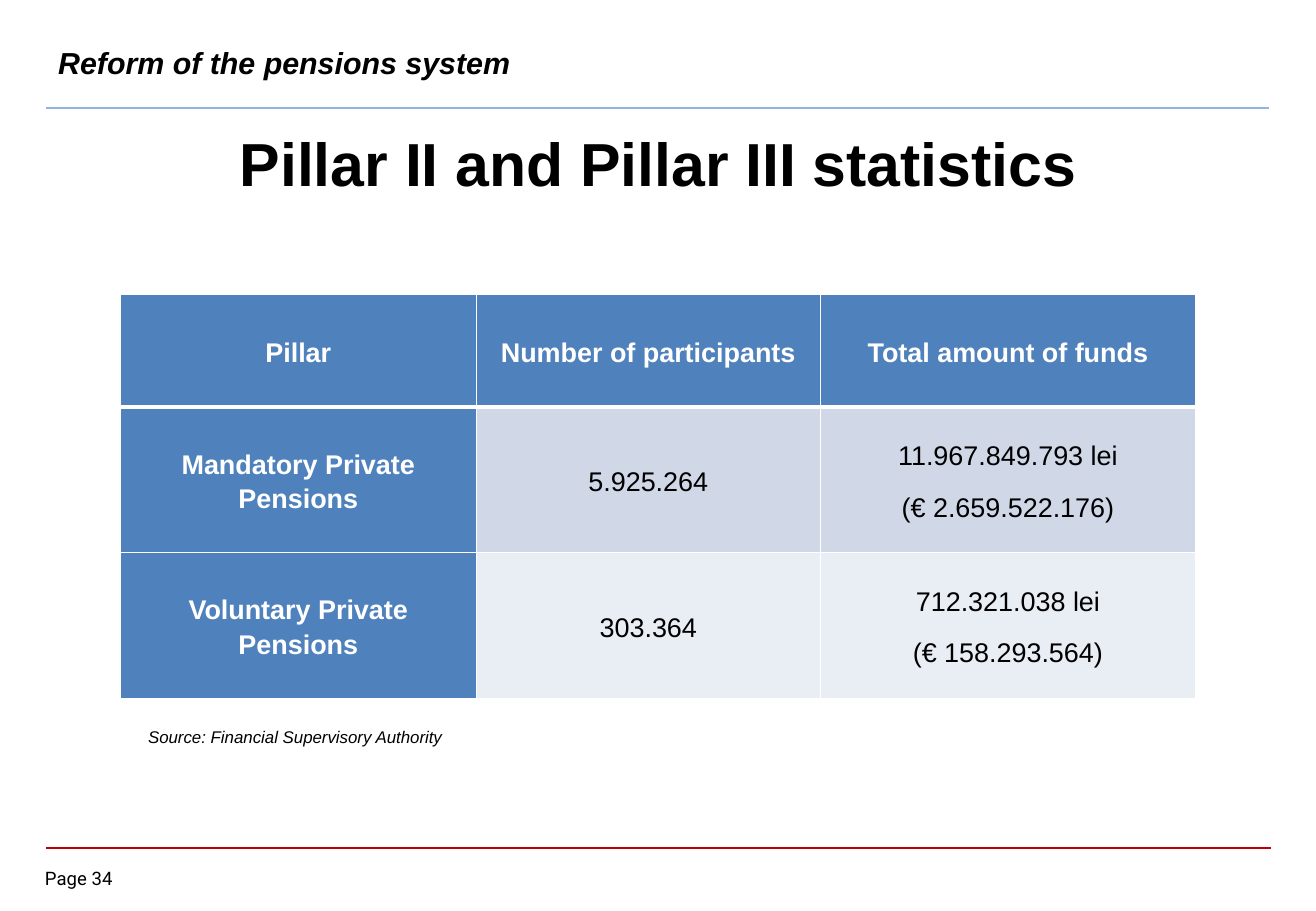
"""Build the slide with statistics on private pension pillars."""
import dataclasses

import lxml.etree
import pptx
import pptx.dml.color
import pptx.enum.shapes
import pptx.enum.text
import pptx.oxml.ns
import pptx.util

ALIGN = pptx.enum.text.PP_ALIGN
ANCHOR = pptx.enum.text.MSO_ANCHOR


@dataclasses.dataclass(frozen=True)
class Theme:
    """Colours, fonts and type sizes of the slide."""
    ink: str = "000000"
    paper: str = "FFFFFF"
    header_rule: str = "8EB4E3"
    footer_rule: str = "C00000"
    heading_fill: str = "4F81BD"
    band_fills: tuple = ("D0D8E8", "E9EDF4")
    font: str = "Arial"
    page_font: str = "Roboto"
    title_size: int = 36
    section_size: int = 18
    table_size: int = 16
    page_size: int = 11
    source_size: int = 10


class SlideBuilder:
    """Draw styled elements on the current slide."""

    EMU_PER_PX = 9144

    def __init__(self, deck, theme):
        """Set the slide size and add a title-only page."""
        self.theme = theme
        deck.slide_width, deck.slide_height = self.px(1083), self.px(750)
        self.page = deck.slides.add_slide(deck.slide_layouts[5])

    def px(self, length):
        """Turn px into EMU."""
        return pptx.util.Emu(length * self.EMU_PER_PX)

    def color(self, code):
        """Turn a hex code into a colour."""
        return pptx.dml.color.RGBColor.from_string(code)

    def style(self, frame, size, color=None, font=None, bold=False, italic=False,
              align=ALIGN.LEFT, spacing=None, after=None):
        """Format every paragraph and run of a text frame."""
        for para in frame.paragraphs:
            para.alignment = align
            if spacing:
                para.line_spacing = spacing
                para.space_after = pptx.util.Pt(after)
            for span in para.runs:
                span.font.name = font or self.theme.font
                span.font.size = pptx.util.Pt(size)
                span.font.bold, span.font.italic = bold, italic
                span.font.color.rgb = self.color(color or self.theme.ink)

    def title(self, text, left, top, width, height, bottom_inset):
        """Fill and place the title placeholder."""
        box = self.page.shapes.title
        box.left, box.top = self.px(left), self.px(top)
        box.width, box.height = self.px(width), self.px(height)
        frame = box.text_frame
        frame.text = text
        frame.auto_size = pptx.enum.text.MSO_AUTO_SIZE.NONE
        frame.vertical_anchor = ANCHOR.MIDDLE
        frame.margin_bottom = self.px(bottom_inset)
        self.style(frame, self.theme.title_size, bold=True, align=ALIGN.CENTER)

    def text(self, text, left, top, width, height, size, anchor=ANCHOR.TOP,
             inset=True, **look):
        """Add a text box."""
        box = self.page.shapes.add_textbox(*map(self.px, (left, top, width, height)))
        frame = box.text_frame
        frame.word_wrap = True
        frame.vertical_anchor = anchor
        if not inset:
            frame.margin_left = frame.margin_right = 0
            frame.margin_top = frame.margin_bottom = 0
        frame.text = text
        self.style(frame, size, **look)

    def rule(self, left, right, top, color, weight):
        """Add a horizontal line."""
        line = self.page.shapes.add_connector(
            pptx.enum.shapes.MSO_CONNECTOR.STRAIGHT,
            *map(self.px, (left, top, right, top)))
        line.line.color.rgb = self.color(color)
        line.line.width = pptx.util.Pt(weight)
        lxml.etree.SubElement(line._element.spPr, pptx.oxml.ns.qn("a:effectLst"))

    def borders(self, cell, weights):
        """Draw the left, right, top and bottom borders of a cell."""
        properties = cell._tc.get_or_add_tcPr()
        for side, weight in zip("LRTB", weights):
            edge = lxml.etree.SubElement(properties, pptx.oxml.ns.qn("a:ln" + side),
                                         w=str(pptx.util.Pt(weight)))
            fill = lxml.etree.SubElement(edge, pptx.oxml.ns.qn("a:solidFill"))
            lxml.etree.SubElement(fill, pptx.oxml.ns.qn("a:srgbClr"),
                                  val=self.theme.paper)

    def table(self, rows, left, top, widths, heights):
        """Add a table with a heading row, a heading column and banded rows."""
        grid = self.page.shapes.add_table(
            len(rows), len(widths),
            *map(self.px, (left, top, sum(widths), sum(heights)))).table
        for column, width in zip(grid.columns, widths):
            column.width = self.px(width)
        for row, height in zip(grid.rows, heights):
            row.height = self.px(height)
        for i, row in enumerate(rows):
            for j, text in enumerate(row):
                self.cell(grid.cell(i, j), text, i, j)

    def cell(self, cell, text, i, j):
        """Fill and format one table cell."""
        theme = self.theme
        heading = i == 0 or j == 0
        self.borders(cell, (1, 1, 3 if i == 1 else 1, 3 if i == 0 else 1))
        cell.fill.solid()
        cell.fill.fore_color.rgb = self.color(
            theme.heading_fill if heading else theme.band_fills[(i - 1) % 2])
        cell.margin_left = cell.margin_right = self.px(8)
        cell.margin_top = cell.margin_bottom = 0
        cell.vertical_anchor = ANCHOR.MIDDLE
        cell.text_frame.text = text
        self.style(cell.text_frame, theme.table_size,
                   color=theme.paper if heading else theme.ink, bold=heading,
                   align=ALIGN.CENTER, spacing=1.15, after=10)


def main():
    """Build and save the deck."""
    deck = pptx.Presentation()
    theme = Theme()
    slide = SlideBuilder(deck, theme)
    slide.rule(38, 1046, 698, theme.footer_rule, 1)
    slide.rule(38, 1044, 89, theme.header_rule, 1.5)
    slide.text("Page 34", 37, 714, 73, 22, theme.page_size,
               inset=False, font=theme.page_font)
    slide.title("Pillar II and Pillar III statistics", 38, 91, 1008, 110, 30)
    slide.text("Source: Financial Supervisory Authority", 112, 592, 338, 28,
               theme.source_size, italic=True, spacing=1.07, after=8)
    slide.table(
        [("Pillar", "Number of participants", "Total amount of funds"),
         ("Mandatory Private Pensions", "5.925.264",
          "11.967.849.793 lei\n(€ 2.659.522.176)"),
         ("Voluntary Private Pensions", "303.364",
          "712.321.038 lei\n(€ 158.293.564)")],
        99, 242, (293, 283, 309), (93, 120, 120))
    slide.text("Reform of the pensions system", 38, 26, 1008, 50,
               theme.section_size, anchor=ANCHOR.MIDDLE, bold=True, italic=True)
    deck.save("out.pptx")


if __name__ == "__main__":
    main()
